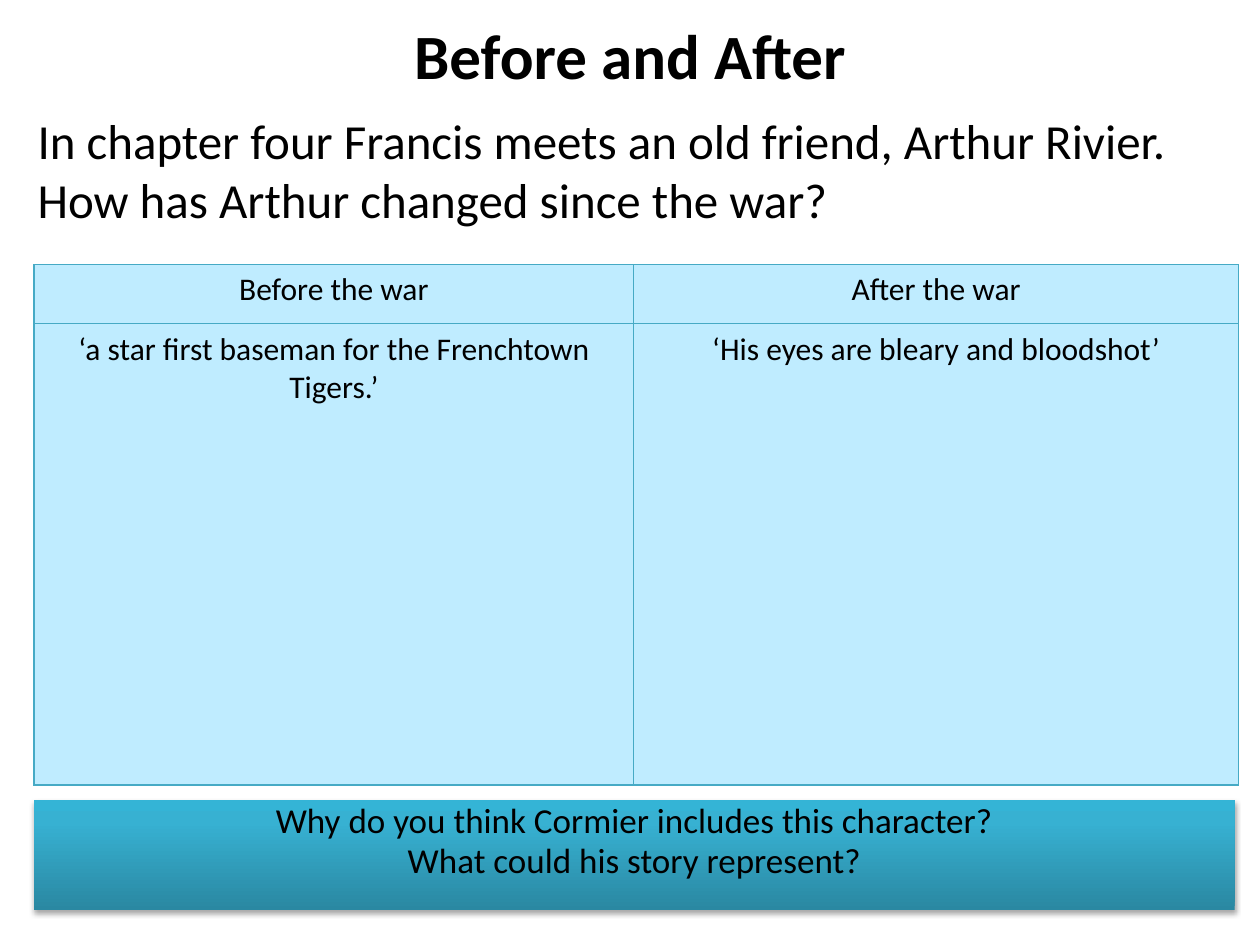
from dataclasses import dataclass

from lxml.etree import SubElement
from pptx import Presentation
from pptx.dml.color import RGBColor
from pptx.enum.shapes import MSO_SHAPE
from pptx.enum.text import MSO_ANCHOR, PP_ALIGN
from pptx.oxml import parse_xml
from pptx.oxml.ns import nsdecls, qn
from pptx.slide import Slide
from pptx.text.text import TextFrame
from pptx.util import Emu, Inches, Pt

SLIDE_WIDTH, SLIDE_HEIGHT = Inches(10), Inches(7.5)


@dataclass(frozen=True)
class Theme:
    font: str = "Calibri"
    ink: str = "000000"
    cell: str = "BFECFF"
    rule: str = "46AAC5"
    bar: tuple = ((0, "2A88A2"), (80, "37B1D2"), (100, "34B4D6"))
    title_size: int = 36
    intro_size: int = 28
    table_size: int = 18
    question_size: int = 20


@dataclass(frozen=True)
class Area:
    """Position and size in percent of the slide."""
    left: float
    top: float
    width: float
    height: float

    def box(self) -> tuple:
        return (Emu(int(SLIDE_WIDTH * self.left / 100)), Emu(int(SLIDE_HEIGHT * self.top / 100)),
                Emu(int(SLIDE_WIDTH * self.width / 100)), Emu(int(SLIDE_HEIGHT * self.height / 100)))


@dataclass(frozen=True)
class Comparison:
    heading: str
    quote: str
    share: float


THEME = Theme()
TITLE_AREA = Area(0, 1.07, 100, 9.33)
INTRO_AREA = Area(2, 11.07, 96.1, 15.6)
TABLE_AREA = Area(2.7, 28, 95.6, 55.07)
QUESTION_AREA = Area(2.7, 84.67, 95.3, 11.6)
HEADING_HEIGHT = Inches(0.47)

COMPARISONS = (
    Comparison("Before the war", "‘a star first baseman for the Frenchtown Tigers.’", 0.498),
    Comparison("After the war", "‘His eyes are bleary and bloodshot’", 0.502),
)
QUESTIONS = ("Why do you think Cormier includes this character?",
             "What could his story represent?")


def write(frame: TextFrame, text: str, size: int, align: PP_ALIGN = PP_ALIGN.CENTER,
          bold: bool = False) -> None:
    frame.text = text
    frame.word_wrap = True
    for paragraph in frame.paragraphs:
        paragraph.alignment = align
        for run in paragraph.runs:
            run.font.name = THEME.font
            run.font.size = Pt(size)
            run.font.bold = bold
            run.font.color.rgb = RGBColor.from_string(THEME.ink)


def add_title(slide: Slide, text: str) -> None:
    title = slide.shapes.title
    title.left, title.top, title.width, title.height = TITLE_AREA.box()
    write(title.text_frame, text, THEME.title_size, bold=True)
    title.text_frame.vertical_anchor = MSO_ANCHOR.MIDDLE


def add_intro(slide: Slide, text: str) -> None:
    intro = slide.shapes.add_textbox(*INTRO_AREA.box())
    write(intro.text_frame, text, THEME.intro_size, PP_ALIGN.LEFT)


def outline_cell(cell) -> None:
    properties = cell._tc.get_or_add_tcPr()
    for position, side in enumerate(("lnL", "lnR", "lnT", "lnB")):
        properties.insert(position, parse_xml(
            f'<a:{side} {nsdecls("a")} w="{Pt(0.75)}"><a:solidFill>'
            f'<a:srgbClr val="{THEME.rule}"/></a:solidFill></a:{side}>'))


def add_comparison_table(slide: Slide, comparisons: tuple[Comparison, ...]) -> None:
    _, _, width, height = area = TABLE_AREA.box()
    table = slide.shapes.add_table(2, len(comparisons), *area).table
    table.first_row = table.horz_banding = False
    table.rows[0].height = HEADING_HEIGHT
    table.rows[1].height = height - HEADING_HEIGHT
    for column, comparison in enumerate(comparisons):
        table.columns[column].width = int(width * comparison.share)
        for row, text in enumerate((comparison.heading, comparison.quote)):
            cell = table.cell(row, column)
            write(cell.text_frame, text, THEME.table_size)
            cell.fill.solid()
            cell.fill.fore_color.rgb = RGBColor.from_string(THEME.cell)
            outline_cell(cell)


def add_question_bar(slide: Slide, questions: tuple[str, ...]) -> None:
    bar = slide.shapes.add_shape(MSO_SHAPE.RECTANGLE, *QUESTION_AREA.box())
    bar.line.fill.background()
    bar.fill.gradient()
    bar.fill.gradient_angle = 90
    properties = bar._element.spPr
    stops = properties.find(qn("a:gradFill")).find(qn("a:gsLst"))
    for old_stop in list(stops):
        stops.remove(old_stop)
    for percent, color in THEME.bar:
        stop = SubElement(stops, qn("a:gs"), pos=str(percent * 1000))
        SubElement(stop, qn("a:srgbClr"), val=color)

    bar.shadow.inherit = False
    shadow = SubElement(properties.find(qn("a:effectLst")), qn("a:outerShdw"),
                        blurRad=str(Pt(3.1)), dist=str(Pt(1.8)), dir="5400000", rotWithShape="0")
    shade = SubElement(shadow, qn("a:srgbClr"), val=THEME.ink)
    SubElement(shade, qn("a:alpha"), val="35000")

    frame = bar.text_frame
    write(frame, "\n".join(questions), THEME.question_size)
    frame.vertical_anchor = MSO_ANCHOR.TOP
    for index, paragraph in enumerate(frame.paragraphs):
        paragraph.line_spacing = 0.8
        if index:
            paragraph.space_before = Pt(0.2 * THEME.question_size)


def main() -> None:
    presentation = Presentation()
    presentation.slide_width, presentation.slide_height = SLIDE_WIDTH, SLIDE_HEIGHT
    slide = presentation.slides.add_slide(presentation.slide_layouts.get_by_name("Title Only"))
    add_title(slide, "Before and After")
    add_intro(slide, "In chapter four Francis meets an old friend, Arthur Rivier. "
                     "How has Arthur changed since the war?")
    add_comparison_table(slide, COMPARISONS)
    add_question_bar(slide, QUESTIONS)
    presentation.save("out.pptx")


if __name__ == "__main__":
    main()
